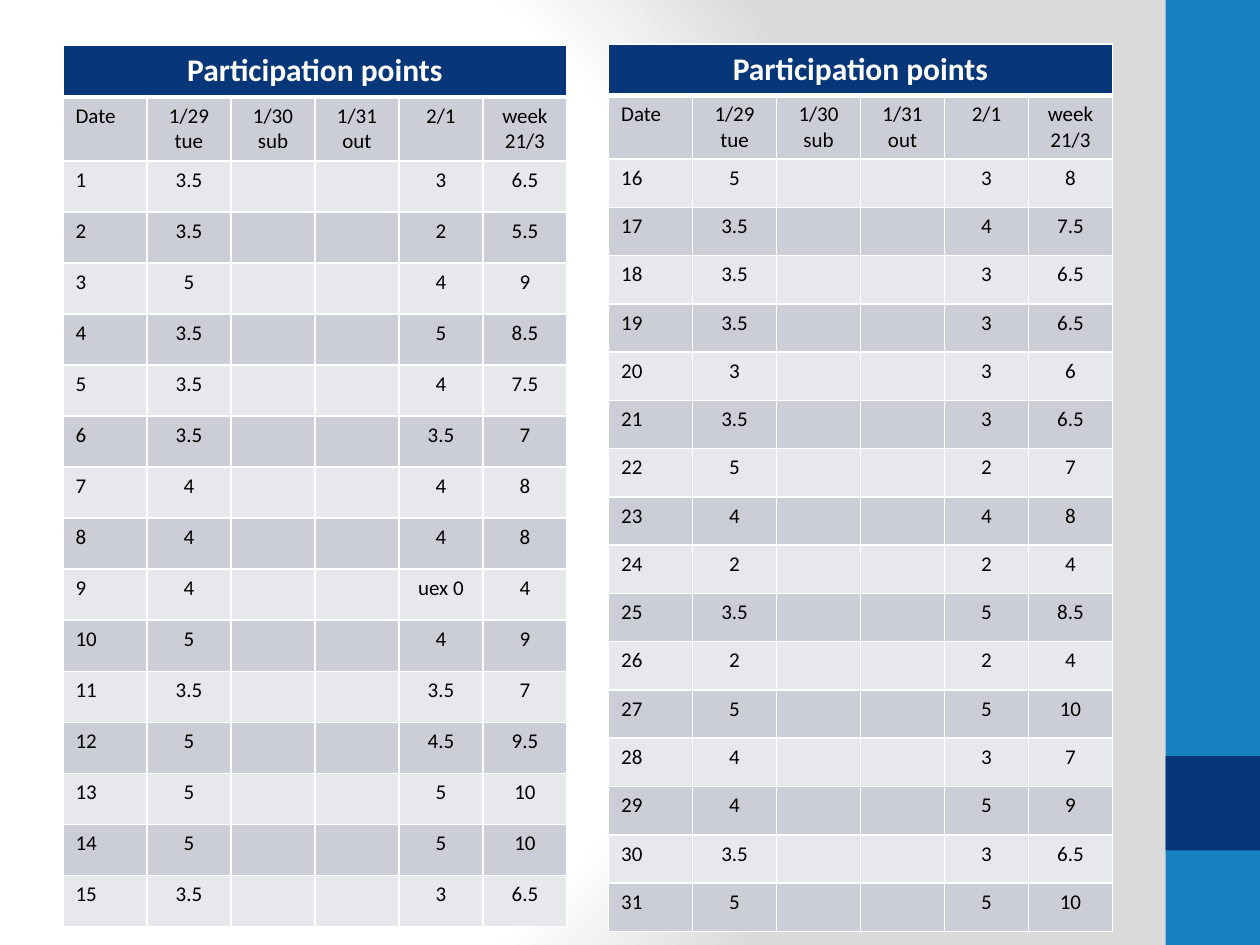
from lxml.etree import SubElement
from pptx import Presentation
from pptx.dml.color import RGBColor
from pptx.enum.shapes import MSO_SHAPE
from pptx.enum.text import PP_ALIGN
from pptx.oxml import parse_xml
from pptx.oxml.ns import nsdecls, qn
from pptx.util import Inches, Pt

NAVY = RGBColor(0x07, 0x37, 0x79)
BLUE = RGBColor(0x17, 0x82, 0xBF)
WHITE = RGBColor(0xFF, 0xFF, 0xFF)
BLACK = RGBColor(0, 0, 0)
GRAY = RGBColor(0xDA, 0xDA, 0xDA)
BANDS = (RGBColor(0xCC, 0xCE, 0xD7), RGBColor(0xE7, 0xE8, 0xEC))
FONT = "Calibri"

TITLE = "Participation points"
# A line break in a heading starts a new paragraph.
LEFT_HEADINGS = ("Date", "1/29 tue", "1/30\nsub", "1/31 out", "2/1", "week 21/3")
RIGHT_HEADINGS = ("Date", "1/29\ntue", "1/30 sub", "1/31 out", "2/1", "week 21/3")

# Points for Tuesday, 2/1 and the week, one student per entry
LEFT_POINTS = [
    ("3.5", "3", "6.5"), ("3.5", "2", "5.5"), ("5", "4", "9"),
    ("3.5", "5", "8.5"), ("3.5", "4", "7.5"), ("3.5", "3.5", "7"),
    ("4", "4", "8"), ("4", "4", "8"), ("4", "uex 0", "4"),
    ("5", "4", "9"), ("3.5", "3.5", "7"), ("5", "4.5", "9.5"),
    ("5", "5", "10"), ("5", "5", "10"), ("3.5", "3", "6.5"),
]
RIGHT_POINTS = [
    ("5", "3", "8"), ("3.5", "4", "7.5"), ("3.5", "3", "6.5"),
    ("3.5", "3", "6.5"), ("3", "3", "6"), ("3.5", "3", "6.5"),
    ("5", "2", "7"), ("4", "4", "8"), ("2", "2", "4"),
    ("3.5", "5", "8.5"), ("2", "2", "4"), ("5", "5", "10"),
    ("4", "3", "7"), ("4", "5", "9"), ("3.5", "3", "6.5"),
    ("5", "5", "10"),
]

# left, top, height, title row height, headings, first student, points
TABLES = [
    (0.5, 0.36, 6.99, 0.41, LEFT_HEADINGS, 1, LEFT_POINTS),
    (4.83, 0.35, 7.03, 0.4, RIGHT_HEADINGS, 16, RIGHT_POINTS),
]
TABLE_WIDTH = 4
HEADING_HEIGHT = 0.5

# top, height, colour of the sidebar's parts
SIDEBAR = [(0, 7.5, BLUE), (6, 0.75, NAVY)]
SIDEBAR_LEFT, SIDEBAR_WIDTH = 9.25, 0.75


def set_background(slide):
    """Fill the slide with a circular gradient."""
    stops = "".join(
        f'<a:gs pos="{share * 1000}"><a:srgbClr val="{color}"/></a:gs>'
        for share, color in ((0, WHITE), (75, WHITE), (100, GRAY)))
    slide.element.cSld.insert(0, parse_xml(
        f'<p:bg {nsdecls("p", "a")}><p:bgPr><a:gradFill rotWithShape="1">'
        f'<a:gsLst>{stops}</a:gsLst><a:path path="circle">'
        '<a:fillToRect l="20000" t="50000" r="100000" b="50000"/></a:path>'
        '</a:gradFill><a:effectLst/></p:bgPr></p:bg>'))


def set_borders(cell, top=1, bottom=1):
    """Draw white borders, with the top and bottom widths in points."""
    properties = cell._tc.get_or_add_tcPr()
    widths = (("a:lnL", 1), ("a:lnR", 1), ("a:lnT", top), ("a:lnB", bottom))
    for index, (tag, width) in enumerate(widths):
        properties.insert(index, parse_xml(
            f'<{tag} {nsdecls("a")} w="{Pt(width)}"><a:solidFill>'
            f'<a:srgbClr val="{WHITE}"/></a:solidFill></{tag}>'))


def fill_cell(cell, text, fill, size=12, color=BLACK, bold=False, align=PP_ALIGN.CENTER):
    cell.fill.solid()
    cell.fill.fore_color.rgb = fill
    frame = cell.text_frame
    for index, line in enumerate(text.split("\n")):
        paragraph = frame.add_paragraph() if index else frame.paragraphs[0]
        paragraph.alignment = align
        if not line:
            # Keeps an empty cell from stretching its row
            SubElement(paragraph._p, qn("a:endParaRPr"), sz=str(size * 100))
            continue
        run = paragraph.add_run()
        run.text = line
        run.font.name = FONT
        run.font.size = Pt(size)
        run.font.bold = bold
        run.font.color.rgb = color


def add_points_table(slide, left, top, height, title_height, headings, first, points):
    rows = [headings]
    for number, (tuesday, friday, week) in enumerate(points, first):
        rows.append((str(number), tuesday, "", "", friday, week))
    columns = len(headings)
    table = slide.shapes.add_table(
        len(rows) + 1, columns, Inches(left), Inches(top),
        Inches(TABLE_WIDTH), Inches(height)).table
    body_height = (height - title_height - HEADING_HEIGHT) / len(points)
    heights = [title_height, HEADING_HEIGHT] + [body_height] * len(points)
    for row, row_height in zip(table.rows, heights):
        row.height = Inches(row_height)

    table.cell(0, 0).merge(table.cell(0, columns - 1))
    fill_cell(table.cell(0, 0), TITLE, NAVY, 18, WHITE, True)
    for column in range(columns):
        set_borders(table.cell(0, column), bottom=3)

    for row, texts in enumerate(rows):
        for column, text in enumerate(texts):
            cell = table.cell(row + 1, column)
            align = PP_ALIGN.CENTER if column else PP_ALIGN.LEFT
            fill_cell(cell, text, BANDS[row % 2], align=align)
            set_borders(cell, top=1 if row else 3)


def main():
    deck = Presentation()
    deck.slide_width, deck.slide_height = Inches(10), Inches(7.5)
    slide = deck.slides.add_slide(deck.slide_layouts[6])
    set_background(slide)
    for top, height, color in SIDEBAR:
        bar = slide.shapes.add_shape(
            MSO_SHAPE.RECTANGLE, Inches(SIDEBAR_LEFT), Inches(top),
            Inches(SIDEBAR_WIDTH), Inches(height))
        bar.shadow.inherit = False
        bar.fill.solid()
        bar.fill.fore_color.rgb = color
        bar.line.fill.background()
    for table in TABLES:
        add_points_table(slide, *table)
    deck.save("out.pptx")


if __name__ == "__main__":
    main()
